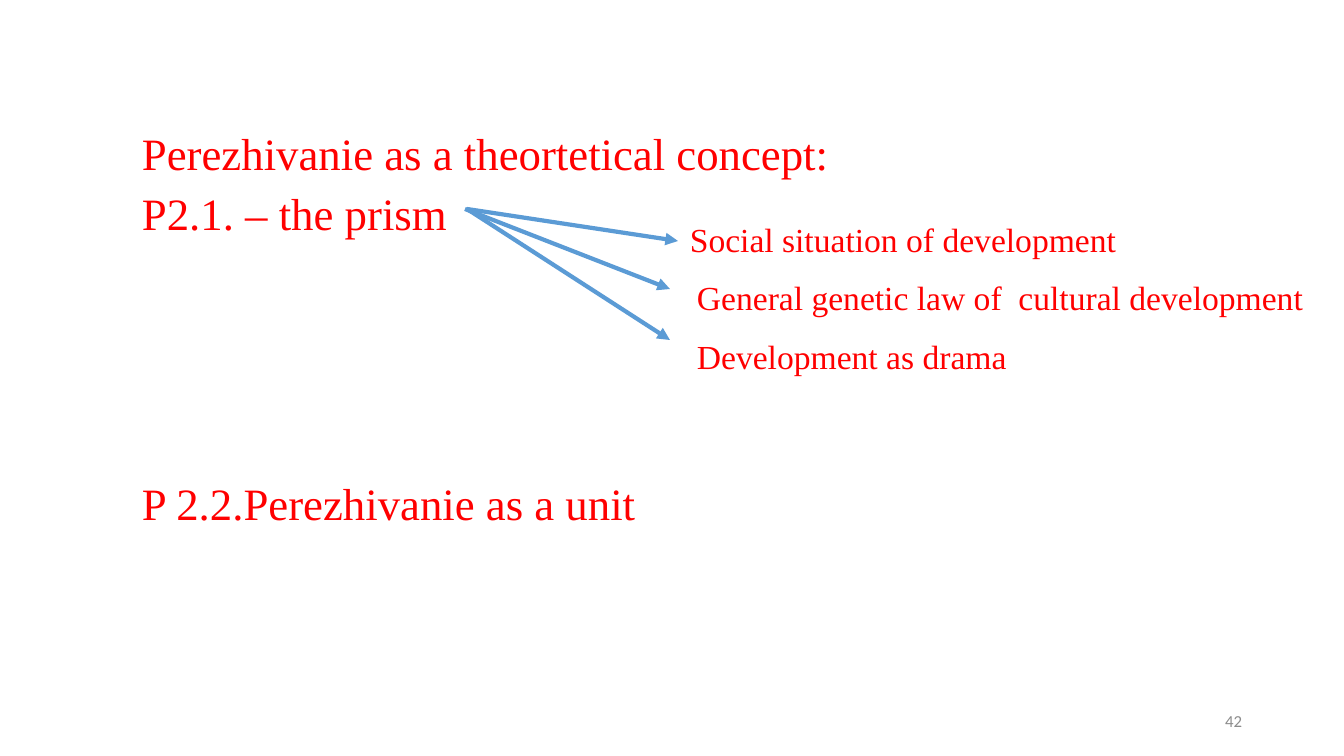
from pptx import Presentation
from pptx.dml.color import RGBColor as RGB
from pptx.enum.shapes import MSO_CONNECTOR as CONN
from pptx.enum.text import MSO_ANCHOR as ANCHOR, PP_ALIGN as ALIGN
from pptx.oxml.ns import qn
from pptx.util import Emu, Pt
from lxml import etree

COLORS = {"text": "FF0000", "arrow": "5B9BD5", "number": "8C8C8C"}
SERIF = "Times New Roman"


def px(n):
    return Emu(round(n * 914400 / 100.8))


prs = Presentation()
prs.slide_width, prs.slide_height = px(1344), px(756)
s = prs.slides.add_slide(prs.slide_layouts[6])


def add_text(box, *lines, size=24, font=SERIF, color="text", align=ALIGN.LEFT,
             anchor=ANCHOR.TOP, spacing=1.07, gaps=(0,)):
    tf = s.shapes.add_textbox(*map(px, box)).text_frame
    tf.word_wrap = True
    tf.vertical_anchor = anchor
    for i, (line, gap) in enumerate(zip(lines, gaps)):
        p = tf.add_paragraph() if i else tf.paragraphs[0]
        p.alignment = align
        p.line_spacing = spacing
        if gap:
            p.space_before = Pt(gap)
        r = p.add_run()
        r.text = line
        r.font.size = Pt(size)
        r.font.name = font
        r.font.color.rgb = RGB.from_string(COLORS[color])


# Main statements
add_text((132, 117, 938, 416),
         "Perezhivanie as a theortetical concept:",
         "P2.1. – the prism",
         "P 2.2.Perezhivanie as a unit",
         size=32, gaps=(0, 2, 166))

# Arrows fanning out from the prism
for x1, x2, y2 in [(467, 678, 241), (465, 670, 289), (467, 670, 340)]:
    c = s.shapes.add_connector(CONN.STRAIGHT, px(x1), px(209), px(x2), px(y2))
    c.line.color.rgb = RGB.from_string(COLORS["arrow"])
    c.line.width = Pt(3)
    etree.SubElement(c.line._get_or_add_ln(), qn("a:tailEnd"), type="triangle")
    etree.SubElement(c._element.spPr, qn("a:effectLst"))

# Concepts the arrows lead to
for x, y, w, concept in [
    (680, 211, 451, "Social situation of development"),
    (687, 269, 632, "General genetic law of  cultural development"),
    (687, 328, 342, "Development as drama"),
]:
    add_text((x, y, w, 53), concept)

# Slide number
add_text((950, 701, 302, 40), "42", size=12, font="Calibri", color="number",
         align=ALIGN.RIGHT, anchor=ANCHOR.MIDDLE, spacing=1.0)

prs.save("out.pptx")
